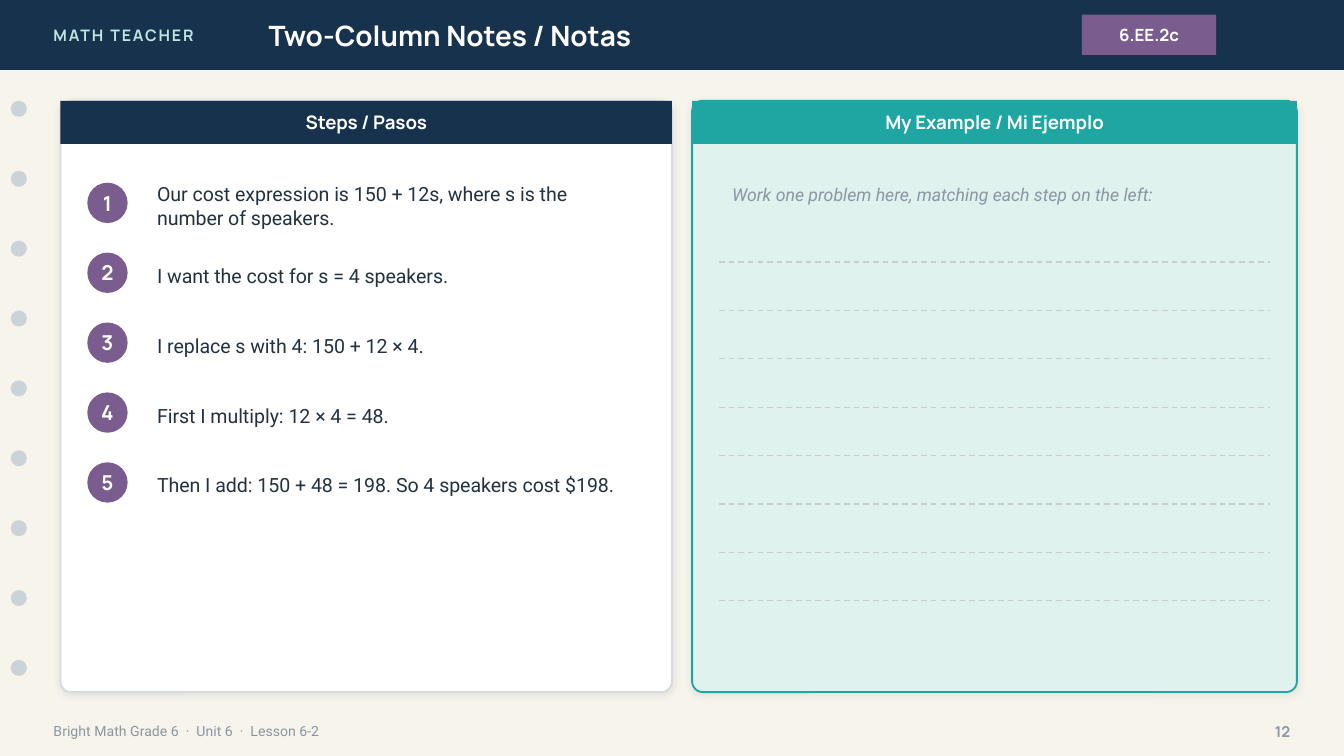
from typing import NamedTuple

from lxml import etree
from pptx import Presentation
from pptx import util as u
from pptx.dml.color import RGBColor
from pptx.enum import dml, shapes, text
from pptx.oxml import ns

NAVY, TEAL, PURPLE, WHITE, GREY = "17324D", "1FA6A2", "7A5C8E", "FFFFFF", "8A96A3"
RECT, ROUND, OVAL = (shapes.MSO_SHAPE.RECTANGLE, shapes.MSO_SHAPE.ROUNDED_RECTANGLE,
                     shapes.MSO_SHAPE.OVAL)
LEFT, CENTER, RIGHT = text.PP_ALIGN.LEFT, text.PP_ALIGN.CENTER, text.PP_ALIGN.RIGHT
STEP_GAP = 0.52


class Box(NamedTuple):
    x: float
    y: float
    w: float
    h: float

    def inches(self) -> list:
        return [u.Inches(v) for v in self]


class Style(NamedTuple):
    size: float
    color: str
    font: str = "Manrope"
    bold: bool = True
    italic: bool = False
    align: text.PP_ALIGN = LEFT


class Panel(NamedTuple):
    title: str
    x: float
    w: float
    header: str
    fill: str
    border: str


PANELS = [
    Panel("Steps / Pasos", 0.45, 4.55, NAVY, WHITE, "D6DBDF"),
    Panel("My Example / Mi Ejemplo", 5.15, 4.5, TEAL, "DFF2EE", TEAL),
]
STEPS = [
    "Our cost expression is 150 + 12s, where s is the number of speakers.",
    "I want the cost for s = 4 speakers.",
    "I replace s with 4: 150 + 12 × 4.",
    "First I multiply: 12 × 4 = 48.",
    "Then I add: 150 + 48 = 198. So 4 speakers cost $198.",
]


def rgb(color: str) -> RGBColor:
    return RGBColor.from_string(color)


def write(s, words: str, style: Style, inset: float = 0.1):
    """Put one styled, vertically centred line of text in a shape."""
    tf = s.text_frame
    frame = {"word_wrap": True, "vertical_anchor": text.MSO_ANCHOR.MIDDLE,
             "margin_left": u.Inches(inset), "margin_right": u.Inches(inset)}
    for name, value in frame.items():
        setattr(tf, name, value)
    p = tf.paragraphs[0]
    p.alignment = style.align
    r = p.add_run()
    r.text = words
    font = {"name": style.font, "size": u.Pt(style.size),
            "bold": style.bold, "italic": style.italic}
    for name, value in font.items():
        setattr(r.font, name, value)
    r.font.color.rgb = rgb(style.color)
    return r


def add_text(sp, box: Box, words: str, style: Style, inset: float = 0.1):
    return write(sp.add_textbox(*box.inches()), words, style, inset)


def add_shape(sp, kind, box: Box, fill: str):
    s = sp.add_shape(kind, *box.inches())
    s.shadow.inherit = False
    s.fill.solid()
    s.fill.fore_color.rgb = rgb(fill)
    s.line.fill.background()
    return s


def add_shadow(s) -> None:
    """Give a card a faint shadow straight below it."""
    effects = s._element.spPr.find(ns.qn("a:effectLst"))
    shadow = etree.SubElement(effects, ns.qn("a:outerShdw"), blurRad=str(u.Pt(4)),
                              dist=str(u.Pt(1)), dir="5400000", rotWithShape="0")
    color = etree.SubElement(shadow, ns.qn("a:srgbClr"), val="1C2E42")
    etree.SubElement(color, ns.qn("a:alpha"), val="10000")


def add_panel(sp, panel: Panel) -> None:
    card = add_shape(sp, ROUND, Box(panel.x, 0.75, panel.w, 4.4), panel.fill)
    card.adjustments[0] = 0.018
    card.line.color.rgb = rgb(panel.border)
    card.line.width = u.Pt(1)
    add_shadow(card)
    header = add_shape(sp, RECT, Box(panel.x, 0.75, panel.w, 0.32), panel.header)
    write(header, panel.title, Style(10, WHITE, align=CENTER))


def add_step(sp, index: int, words: str) -> None:
    y = 1.36 + index * STEP_GAP
    badge = Box(0.65, y, 0.3, 0.3)
    add_shape(sp, OVAL, badge, PURPLE)
    add_text(sp, badge, str(index + 1), Style(11, WHITE, align=CENTER), inset=0)
    add_text(sp, Box(1.07, y - 0.06, 3.78, 0.46), words,
             Style(10.5, "24323F", "Roboto", bold=False))


def add_writing_line(sp, y: float) -> None:
    line = sp.add_connector(shapes.MSO_CONNECTOR.STRAIGHT, u.Inches(5.35), u.Inches(y),
                            u.Inches(9.45), u.Inches(y))
    line.line.color.rgb = rgb("C7CDD2")
    line.line.width = u.Pt(0.75)
    line.line.dash_style = dml.MSO_LINE.DASH
    etree.SubElement(line._element.spPr, ns.qn("a:effectLst"))


def main() -> None:
    prs = Presentation()
    prs.slide_width, prs.slide_height = u.Inches(10), u.Inches(5.625)
    slide = prs.slides.add_slide(prs.slide_layouts[6])
    slide.background.fill.solid()
    slide.background.fill.fore_color.rgb = rgb("F7F4EC")
    sp = slide.shapes

    add_shape(sp, RECT, Box(0, 0, 10, 0.52), NAVY)
    brand = add_text(sp, Box(0.3, 0, 2.4, 0.52), "MATH TEACHER", Style(8.5, "BFE6E2"))
    brand.font._element.set("spc", "100")
    add_text(sp, Box(1.9, 0, 5.6, 0.52), "Two-Column Notes / Notas", Style(15, WHITE))
    standard = add_shape(sp, RECT, Box(8.05, 0.11, 1, 0.3), PURPLE)
    write(standard, "6.EE.2c", Style(9, WHITE, align=CENTER))

    for i in range(9):
        add_shape(sp, OVAL, Box(0.08, 0.75 + i * STEP_GAP, 0.12, 0.12), "CBD3D9")

    add_text(sp, Box(0.3, 5.3, 7, 0.28), "Bright Math Grade 6  ·  Unit 6  ·  Lesson 6-2",
             Style(7.5, GREY, "Roboto", bold=False))
    add_text(sp, Box(9.2, 5.3, 0.5, 0.28), "12", Style(8, GREY, align=RIGHT))

    for panel in PANELS:
        add_panel(sp, panel)
    for i, words in enumerate(STEPS):
        add_step(sp, i, words)
    add_text(sp, Box(5.35, 1.25, 4.1, 0.4),
             "Work one problem here, matching each step on the left:",
             Style(9.5, GREY, "Roboto", bold=False, italic=True))
    for i in range(8):
        add_writing_line(sp, 1.95 + i * 0.36)

    prs.save("out.pptx")


if __name__ == "__main__":
    main()
